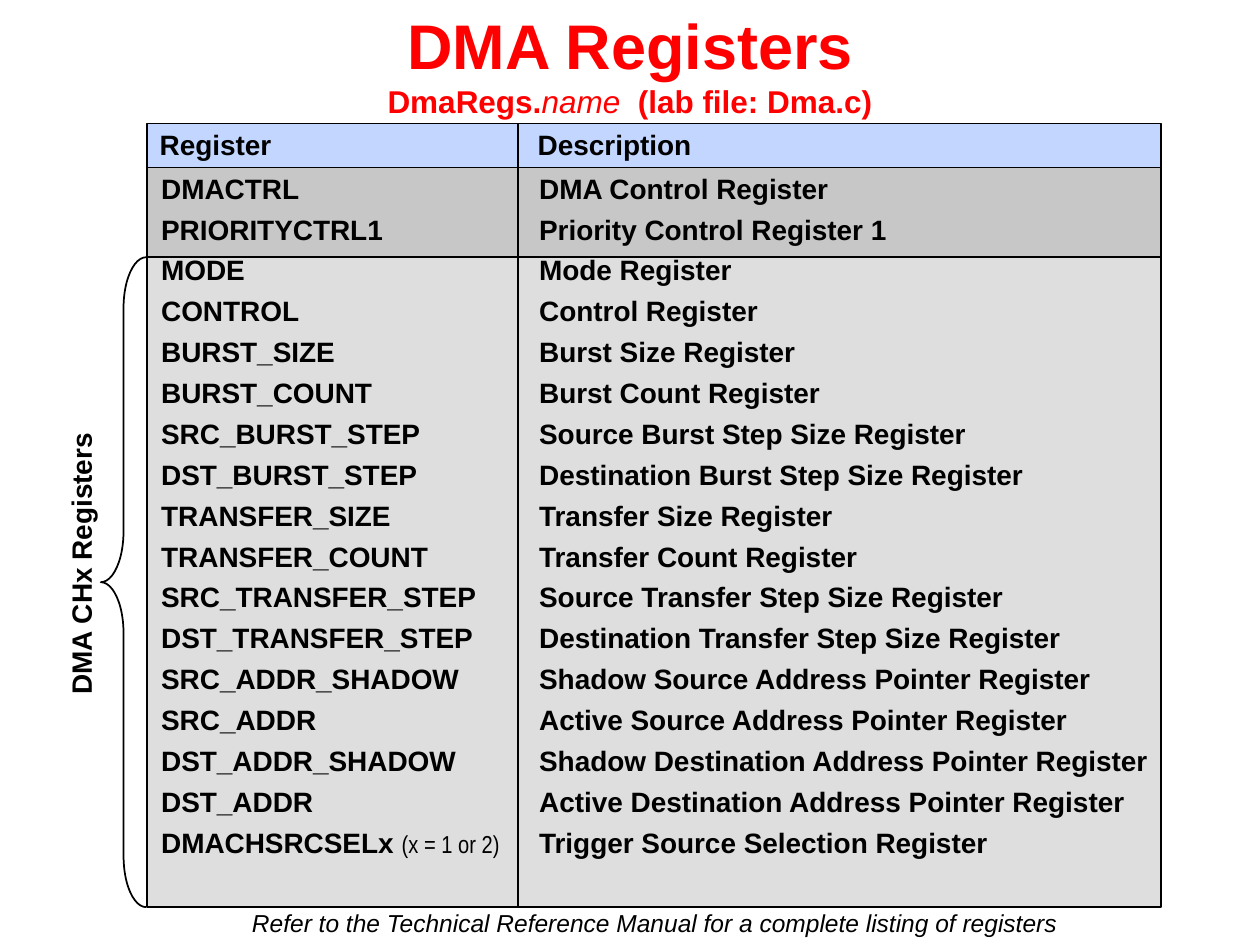
from lxml.etree import SubElement
from pptx import Presentation
from pptx.dml.color import RGBColor
from pptx.enum.shapes import MSO_CONNECTOR, MSO_SHAPE
from pptx.enum.text import MSO_ANCHOR, MSO_AUTO_SIZE, PP_ALIGN
from pptx.oxml.ns import qn
from pptx.util import Pt

RED = RGBColor(0xFF, 0x00, 0x00)
BLACK = RGBColor(0x00, 0x00, 0x00)
HEADER_BLUE = RGBColor(0xC2, 0xD6, 0xFF)
GLOBAL_GRAY = RGBColor(0xC7, 0xC7, 0xC7)
CHANNEL_GRAY = RGBColor(0xDE, 0xDE, 0xDE)

# Table bands, in points
TABLE_LEFT, TABLE_WIDTH = 84, 579.6
HEADER_TOP, GLOBAL_TOP, CHANNEL_TOP, TABLE_BOTTOM = 70.5, 95.8, 147, 518.4
DIVIDER_X = 296
DESCRIPTION_TAB = 216

# Text formats
BODY = {"name": "Arial", "size": Pt(16), "bold": True}
NOTE = {"name": "Arial Narrow", "size": Pt(14), "bold": False}
FOOTNOTE = {"name": "Arial", "size": Pt(14), "italic": True}
TITLE = {"name": "Arial", "size": Pt(36), "bold": True}
SUBTITLE = {"name": "Arial", "size": Pt(18), "bold": True}
SUBTITLE_NAME = {"name": "Arial", "size": Pt(18), "bold": False, "italic": True}

REGISTERS = [
    ("DMACTRL", "DMA Control Register"),
    ("PRIORITYCTRL1", "Priority Control Register 1"),
    ("MODE", "Mode Register"),
    ("CONTROL", "Control Register"),
    ("BURST_SIZE", "Burst Size Register"),
    ("BURST_COUNT", "Burst Count Register"),
    ("SRC_BURST_STEP", "Source Burst Step Size Register"),
    ("DST_BURST_STEP", "Destination Burst Step Size Register"),
    ("TRANSFER_SIZE", "Transfer Size Register"),
    ("TRANSFER_COUNT", "Transfer Count Register"),
    ("SRC_TRANSFER_STEP", "Source Transfer Step Size Register"),
    ("DST_TRANSFER_STEP", "Destination Transfer Step Size Register"),
    ("SRC_ADDR_SHADOW", "Shadow Source Address Pointer Register"),
    ("SRC_ADDR", "Active Source Address Pointer Register"),
    ("DST_ADDR_SHADOW", "Shadow Destination Address Pointer Register"),
    ("DST_ADDR", "Active Destination Address Pointer Register"),
]


def add_run(paragraph, text, text_format, color=BLACK):
    run = paragraph.add_run()
    run.text = text
    for attribute, value in text_format.items():
        setattr(run.font, attribute, value)
    run.font.color.rgb = color


def add_outlined(slide, preset, left, top, width, height, fill=None):
    outlined = slide.shapes.add_shape(preset, Pt(left), Pt(top), Pt(width), Pt(height))
    outlined.shadow.inherit = False
    if fill is None:
        outlined.fill.background()
    else:
        outlined.fill.solid()
        outlined.fill.fore_color.rgb = fill
    outlined.line.color.rgb = BLACK
    outlined.line.width = Pt(1)
    return outlined


def add_band(slide, top, bottom, fill):
    add_outlined(slide, MSO_SHAPE.RECTANGLE, TABLE_LEFT, top, TABLE_WIDTH, bottom - top, fill)


def add_lines(slide, left, top, width, height, lines, tab=None, align=PP_ALIGN.LEFT):
    """Each line is a list of (text, format) pairs."""
    block = slide.shapes.add_textbox(Pt(left), Pt(top), Pt(width), Pt(height))
    frame = block.text_frame
    frame.word_wrap = False
    frame.auto_size = MSO_AUTO_SIZE.SHAPE_TO_FIT_TEXT
    for index, line in enumerate(lines):
        paragraph = frame.add_paragraph() if index else frame.paragraphs[0]
        if tab:
            stops = SubElement(paragraph._p.get_or_add_pPr(), qn("a:tabLst"))
            SubElement(stops, qn("a:tab"), pos=str(Pt(tab)), algn="l")
        paragraph.alignment = align
        paragraph.line_spacing = 0.8
        if index:
            paragraph.space_before = Pt(8)
        for text, text_format in line:
            add_run(paragraph, text, text_format)
    return block


def add_title(slide):
    heading = slide.shapes.add_textbox(Pt(0), Pt(0), Pt(720), Pt(61.2))
    frame = heading.text_frame
    frame.word_wrap = True
    frame.vertical_anchor = MSO_ANCHOR.TOP
    frame.margin_top = Pt(3.5)
    frame.margin_bottom = Pt(0)
    paragraph = frame.paragraphs[0]
    paragraph.alignment = PP_ALIGN.CENTER
    add_run(paragraph, "DMA Registers", TITLE, RED)
    paragraph.add_line_break()
    add_run(paragraph, "DmaRegs.", SUBTITLE, RED)
    add_run(paragraph, "name", SUBTITLE_NAME, RED)
    add_run(paragraph, "  (lab file: Dma.c)", SUBTITLE, RED)


def add_divider(slide, x, top, bottom):
    divider = slide.shapes.add_connector(
        MSO_CONNECTOR.STRAIGHT, Pt(x), Pt(top), Pt(x), Pt(bottom))
    divider.line.color.rgb = BLACK
    divider.line.width = Pt(1)
    SubElement(divider._element.spPr, qn("a:effectLst"))


def main():
    prs = Presentation()
    prs.slide_width, prs.slide_height = Pt(720), Pt(540)
    slide = prs.slides.add_slide(prs.slide_layouts[6])

    # Table bands
    add_band(slide, HEADER_TOP, GLOBAL_TOP, HEADER_BLUE)
    add_band(slide, CHANNEL_TOP, TABLE_BOTTOM, CHANNEL_GRAY)
    add_band(slide, GLOBAL_TOP, CHANNEL_TOP, GLOBAL_GRAY)

    add_title(slide)

    # Register names and descriptions
    rows = [[(f"{register}\t{description}", BODY)] for register, description in REGISTERS]
    rows.append([("DMACHSRCSELx ", BODY), ("(x = 1 or 2)", NOTE),
                 ("\tTrigger Source Selection Register", BODY)])
    add_lines(slide, 85, 98, 584.6, 426.2, rows, DESCRIPTION_TAB)
    add_lines(slide, 84.2, 73, 318.2, 22.3,
              [[("Register\tDescription", BODY)]], DESCRIPTION_TAB)

    # Channel brace and its label
    brace = add_outlined(slide, MSO_SHAPE.LEFT_BRACE, 57.6, CHANNEL_TOP, 26,
                         TABLE_BOTTOM - CHANNEL_TOP)
    brace.adjustments[0] = 1.12
    brace.adjustments[1] = 0.5
    channel_label = add_lines(slide, -34.6, 310.3, 164.9, 22.3,
                              [[("DMA CHx Registers", BODY)]])
    channel_label.rotation = 270

    # Column divider
    add_divider(slide, DIVIDER_X, HEADER_TOP, TABLE_BOTTOM)

    # Footnote
    footnote = add_lines(
        slide, 136, 518.4, 476.6, 20.9,
        [[("Refer to the Technical Reference Manual for a complete listing of registers",
           FOOTNOTE)]], align=PP_ALIGN.CENTER)
    footnote.text_frame.vertical_anchor = MSO_ANCHOR.MIDDLE

    prs.save("out.pptx")


if __name__ == "__main__":
    main()
